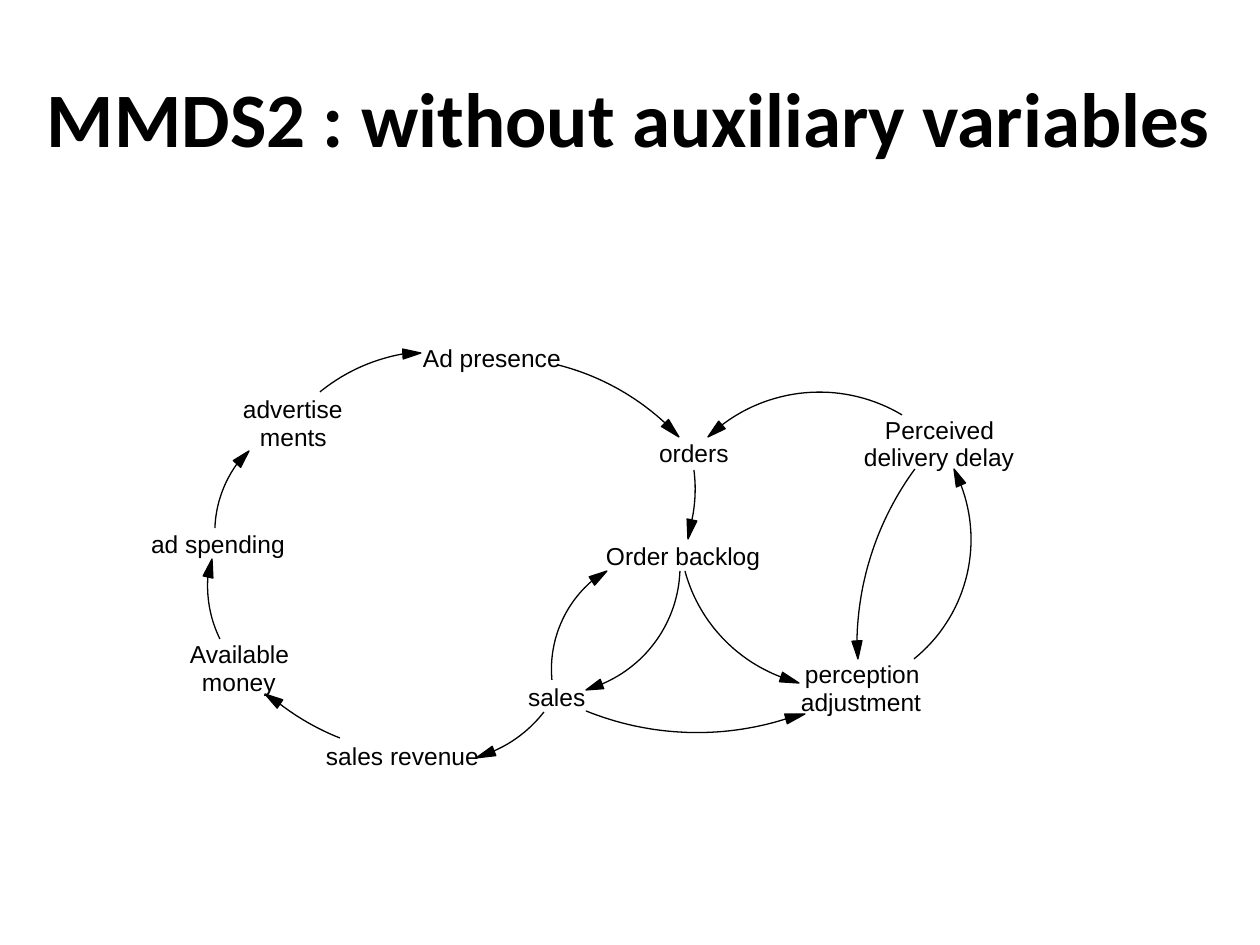
from math import atan2, cos, dist, hypot, pi, sin

from pptx import Presentation
from pptx.dml.color import RGBColor
from pptx.enum.text import MSO_ANCHOR, MSO_AUTO_SIZE, PP_ALIGN
from pptx.util import Pt

SCALE = 914400 / 126
LEFT, CENTER = PP_ALIGN.LEFT, PP_ALIGN.CENTER
MIDDLE = MSO_ANCHOR.MIDDLE
GROW = MSO_AUTO_SIZE.SHAPE_TO_FIT_TEXT
BLACK = "000000"
STEPS = 32
HALF = 5

LABELS = [
    ("advertise", 243, 394, 112),
    ("ments", 260, 422, 78),
    ("sales", 528, 682, 68),
    ("sales revenue", 326, 741, 165),
    ("Ad presence", 423, 343, 150),
    ("orders", 659, 438, 82),
    ("Order backlog", 606, 541, 166),
    ("Available", 190, 639, 112),
    ("money", 202, 667, 84),
    ("ad spending", 151, 529, 146),
    ("Perceived", 885, 415, 121),
    ("delivery delay", 864, 442, 161),
    ("perception", 805, 659, 126),
    ("adjustment", 801, 687, 132),
]

# pivot, tail, base of head, tip
LINKS = [
    ((442, 633), (544, 712), (494, 751), (476, 758)),
    ((435, 533), (320, 392), (403, 354), (421, 353)),
    ((548, 488), (694, 470), (692, 520), (688, 539)),
    ((552, 567), (680, 571), (602, 684), (586, 690)),
    ((430, 507), (340, 738), (280, 704), (265, 694)),
    ((331, 532), (215, 528), (237, 464), (249, 451)),
    ((818, 539), (914, 659), (961, 485), (954, 469)),
    ((668, 669), (552, 680), (592, 581), (607, 571)),
    ((1157, 646), (915, 469), (857, 641), (858, 659)),
    ((328, 586), (220, 639), (208, 577), (212, 559)),
    ((837, 530), (685, 571), (781, 677), (799, 683)),
    ((699, 437), (586, 711), (786, 719), (805, 714)),
    ((820, 553), (902, 415), (722, 425), (708, 437)),
    ((496, 604), (558, 365), (665, 423), (679, 437)),
]


def px(value):
    return round(value * SCALE)


def color(code):
    return RGBColor.from_string(code)


def spot(point):
    return px(point[0]), px(point[1])


def place(shape, left, top, width, height):
    shape.left, shape.top = px(left), px(top)
    shape.width, shape.height = px(width), px(height)


def write(frame, text, size=14, font="Arial", bold=False, align=LEFT, ink=BLACK):
    para = frame.paragraphs[0]
    para.alignment = align
    run = para.add_run()
    run.text = text
    run.font.size = Pt(size)
    run.font.name = font
    run.font.bold = bold
    run.font.color.rgb = color(ink)


def add_label(slide, text, left, top, width):
    box = slide.shapes.add_textbox(px(left), px(top), px(width), px(33))
    frame = box.text_frame
    frame.margin_left = frame.margin_right = 0
    frame.margin_top = frame.margin_bottom = 0
    frame.word_wrap = False
    frame.auto_size = GROW
    write(frame, text)


def finish(pen, fill=None):
    shape = pen.convert_to_shape()
    shape.shadow.inherit = False
    shape.line.color.rgb = color(BLACK)
    shape.line.width = Pt(0)
    if fill:
        shape.fill.solid()
        shape.fill.fore_color.rgb = color(fill)
    else:
        shape.fill.background()


def arc_points(pivot, tail, base):
    first = atan2(tail[1] - pivot[1], tail[0] - pivot[0])
    last = atan2(base[1] - pivot[1], base[0] - pivot[0])
    sweep = (last - first + pi) % (2 * pi) - pi
    near, far = dist(pivot, tail), dist(pivot, base)
    points = []
    for step in range(STEPS + 1):
        part = step / STEPS
        angle = first + sweep * part
        reach = near + (far - near) * part
        points.append((pivot[0] + reach * cos(angle), pivot[1] + reach * sin(angle)))
    return points


def add_arc(slide, pivot, tail, base):
    points = [spot(point) for point in arc_points(pivot, tail, base)]
    pen = slide.shapes.build_freeform(*spot(pivot))
    pen.move_to(*points[0])
    pen.add_line_segments(points[1:], close=False)
    finish(pen)


def add_head(slide, base, tip):
    run, rise = tip[0] - base[0], tip[1] - base[1]
    size = hypot(run, rise)
    side, lift = -rise / size * HALF, run / size * HALF
    pen = slide.shapes.build_freeform(*spot(tip))
    pen.add_line_segments([
        spot((base[0] + side, base[1] + lift)),
        spot((base[0] - side, base[1] - lift)),
    ])
    finish(pen, fill=BLACK)


def add_title(slide, text):
    title = slide.shapes.title
    place(title, 18, 38, 1223, 158)
    title.text_frame.vertical_anchor = MIDDLE
    write(title.text_frame, text, size=44, font="Calibri", bold=True, align=CENTER)


def main():
    deck = Presentation()
    deck.slide_width, deck.slide_height = px(1260), px(945)
    slide = deck.slides.add_slide(deck.slide_layouts[5])
    add_title(slide, "MMDS2 : without auxiliary variables")
    for label in LABELS:
        add_label(slide, *label)
    for pivot, tail, base, tip in LINKS:
        add_arc(slide, pivot, tail, base)
        add_head(slide, base, tip)
    deck.save("out.pptx")


if __name__ == "__main__":
    main()
